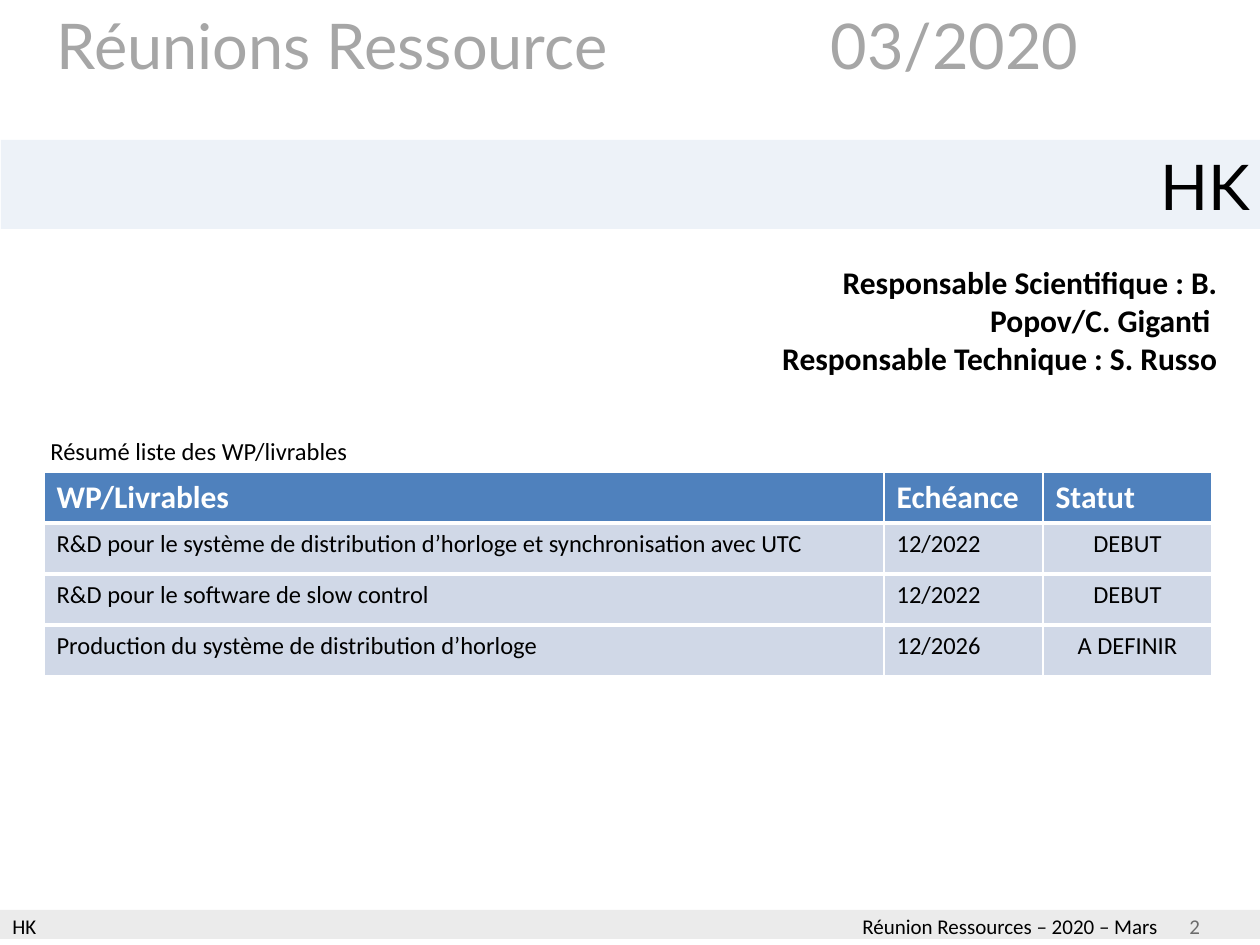
import pptx
import pptx.util
import pptx.oxml
import pptx.oxml.ns
import pptx.dml.color
import pptx.enum.text
import pptx.enum.shapes

SCALE = 914400 / 126
HUES = {"ink": "000000", "gray": "A6A6A6", "foot": "D9D9D9", "band": "DCE6F2",
        "head": "4F81BD", "row": "D0D8E7", "white": "FFFFFF"}
ALIGN = pptx.enum.text.PP_ALIGN
WORK = [
    ("WP/Livrables", "Echéance", "Statut"),
    ("R&D pour le système de distribution d’horloge et synchronisation avec UTC",
     "12/2022", "DEBUT"),
    ("R&D pour le software de slow control", "12/2022", "DEBUT"),
    ("Production du système de distribution d’horloge", "12/2026", "A DEFINIR"),
]


def px(num):
    return pptx.util.Emu(round(num * SCALE))


def rgb(hue):
    return pptx.dml.color.RGBColor.from_string(HUES[hue])


def style(para, size, hue="ink", face="Calibri", bold=False, align=ALIGN.LEFT):
    para.alignment = align
    para.font.color.rgb = rgb(hue)
    looks = {"size": pptx.util.Pt(size), "name": face, "bold": bold}
    for key, val in looks.items():
        setattr(para.font, key, val)


def label(slide, box, lines, size, wrap=True, **look):
    frame = slide.shapes.add_textbox(*map(px, box)).text_frame
    frame.word_wrap = wrap
    frame.text = "\n".join(lines)
    for para in frame.paragraphs:
        style(para, size, **look)


def strip(slide, box, hue):
    kind = pptx.enum.shapes.MSO_SHAPE.RECTANGLE
    bar = slide.shapes.add_shape(kind, *map(px, box))
    bar.shadow.inherit = False
    bar.line.fill.background()
    bar.fill.solid()
    bar.fill.fore_color.rgb = rgb(hue)
    tint = bar.fill._xPr.find(".//" + pptx.oxml.ns.qn("a:srgbClr"))
    pptx.oxml.ns.qn("a:alpha")
    tint.append(pptx.oxml.parse_xml(
        f'<a:alpha {pptx.oxml.ns.nsdecls("a")} val="50000"/>'))


def title(slide, box):
    head = slide.shapes.title
    place = dict(zip(("left", "top", "width", "height"), map(px, box)))
    for key, val in place.items():
        setattr(head, key, val)
    frame = head.text_frame
    frame.text = "Réunions Ressource\t03/2020"
    frame.word_wrap = True
    frame.vertical_anchor = pptx.enum.text.MSO_ANCHOR.TOP
    para = frame.paragraphs[0]
    para._p.get_or_add_pPr().append(pptx.oxml.parse_xml(
        f'<a:tabLst {pptx.oxml.ns.nsdecls("a")}>'
        f'<a:tab pos="{px(774)}" algn="l"/></a:tabLst>'))
    style(para, 36, hue="gray", face="Lato")


def banner(slide, box):
    x, y, w, h = box
    strip(slide, box, "band")
    label(slide, (x + w - 196, y + 1, 198, h - 1), ["HK"], 36,
          face="Lato", align=ALIGN.RIGHT)


def edge(cell, top, base):
    sides = {"L": 1, "R": 1, "T": top, "B": base}
    for spot, (side, wide) in enumerate(sides.items()):
        cell._tc.get_or_add_tcPr().insert(spot, pptx.oxml.parse_xml(
            f'<a:ln{side} {pptx.oxml.ns.nsdecls("a")} w="{pptx.util.Pt(wide)}">'
            f'<a:solidFill><a:srgbClr val="{HUES["white"]}"/></a:solidFill>'
            f'</a:ln{side}>'))


def table(slide, box, wides):
    grid = slide.shapes.add_table(len(WORK), len(wides), *map(px, box)).table
    for col, wide in zip(grid.columns, wides):
        col.width = px(wide)
    last = len(WORK) - 1
    for r, row in enumerate(WORK):
        for c, text in enumerate(row):
            cell = grid.cell(r, c)
            cell.text = text
            cell.fill.solid()
            cell.fill.fore_color.rgb = rgb("row" if r else "head")
            edge(cell, 3 if r else 1, 3 if r < last else 1)
            para = cell.text_frame.paragraphs[0]
            if r:
                style(para, 14, align=ALIGN.CENTER if c == 2 else ALIGN.LEFT)
            else:
                style(para, 18, hue="white", bold=True)


def footer(slide, box):
    x, y, w, h = box
    label(slide, (x + 1177, y - 3, 83, 38), ["2"], 12)
    strip(slide, box, "foot")
    label(slide, (x + 850, y - 3, 372, 38), ["Réunion Ressources – 2020 – Mars"], 12)
    label(slide, (x, y - 3, 155, 38), ["HK"], 12)


def main():
    deck = pptx.Presentation()
    deck.slide_width, deck.slide_height = px(1260), px(945)
    slide = deck.slides.add_slide(deck.slide_layouts[5])
    footer(slide, (0, 910, 1260, 29))
    banner(slide, (1, 140, 1260, 89))
    label(slide, (728, 257, 502, 88),
          ["Responsable Scientifique : B. Popov/C. Giganti ",
           "Responsable Technique : S. Russo"],
          18, wrap=False, bold=True, align=ALIGN.RIGHT)
    label(slide, (38, 430, 425, 42), ["Résumé liste des WP/livrables"], 14)
    table(slide, (44, 472, 1168, 204), (840, 159, 169))
    title(slide, (44, 0, 1216, 88))
    deck.save("out.pptx")


if __name__ == "__main__":
    main()
